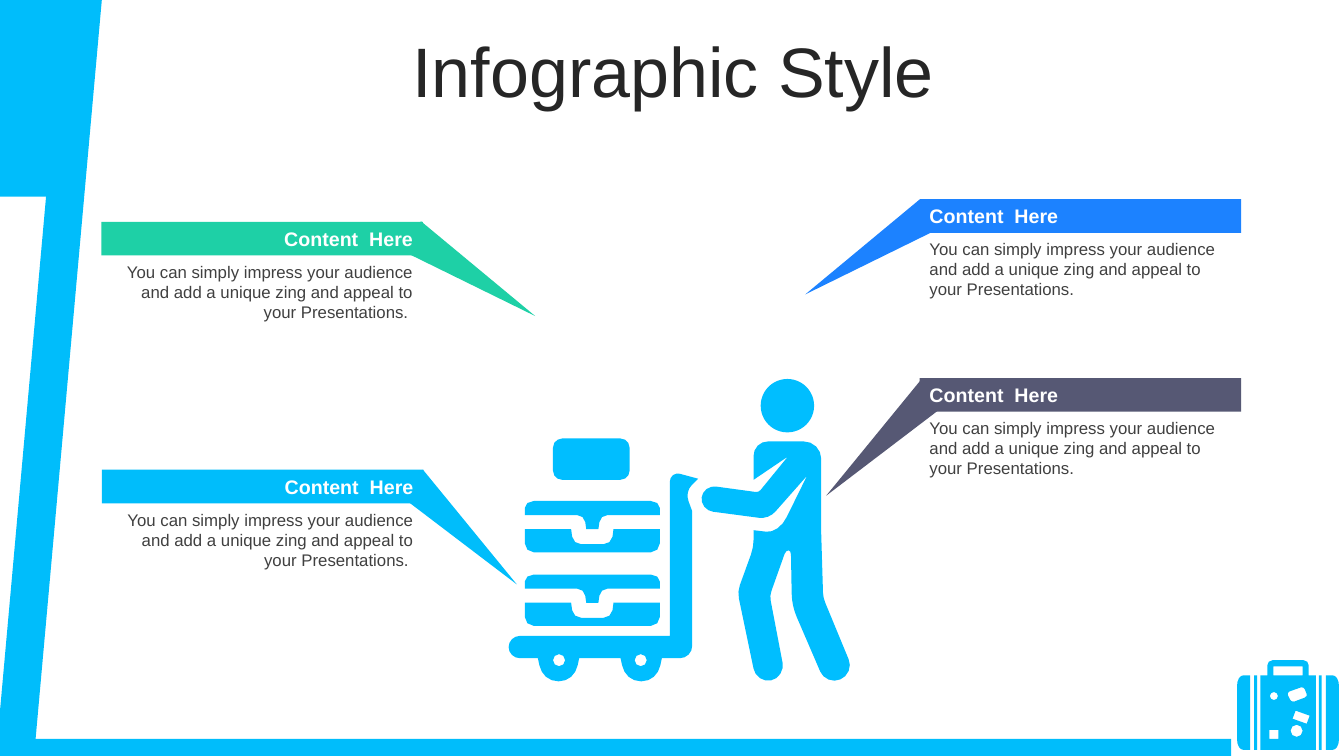
"""Build the Infographic Style slide with a porter and four callouts."""
import math
from dataclasses import dataclass

import pptx
import pptx.dml.color
import pptx.enum.shapes
import pptx.enum.text
import pptx.util

SHAPE = pptx.enum.shapes.MSO_SHAPE
ALIGN = pptx.enum.text.PP_ALIGN
ANCHOR = pptx.enum.text.MSO_ANCHOR
COLS, ROWS = 1333, 750
STEP = pptx.util.Inches(0.01)


@dataclass(frozen=True)
class Theme:
    """Colours, font and type sizes."""
    font: str = "Arial"
    frame: str = "00BDFB"
    figure: str = "00BEFF"
    green: str = "1ED0A6"
    blue: str = "1C82FF"
    slate: str = "565874"
    white: str = "FFFFFF"
    title_ink: str = "262626"
    body_ink: str = "404040"
    title: int = 50
    head: int = 14
    body: int = 12


THEME = Theme()
BODY = ("You can simply impress your audience and add a unique zing "
        "and appeal to your Presentations.")


def grid(*cells):
    """Turn grid cells into slide lengths."""
    return [round(cell * STEP) for cell in cells]


def paint(shape, color):
    """Give a shape a flat fill with no line or shadow."""
    shape.shadow.inherit = False
    shape.fill.solid()
    shape.fill.fore_color.rgb = pptx.dml.color.RGBColor.from_string(color)
    shape.line.fill.background()
    return shape


def block(slide, box, color, kind=SHAPE.RECTANGLE, adjust=None, turn=0):
    """Place a painted preset shape."""
    shape = paint(slide.shapes.add_shape(kind, *grid(*box)), color)
    if adjust is not None:
        shape.adjustments[0] = adjust
    shape.rotation = turn
    return shape


def write(shape, text, size, color, bold=False, align=ALIGN.LEFT,
          anchor=ANCHOR.TOP, spacing=None):
    """Set one formatted paragraph in a shape."""
    frame = shape.text_frame
    frame.word_wrap = True
    frame.vertical_anchor = anchor
    para = frame.paragraphs[0]
    para.alignment = align
    para.line_spacing = spacing
    run = para.add_run()
    run.text = text
    run.font.name = THEME.font
    run.font.size = pptx.util.Pt(size)
    run.font.bold = bold
    run.font.color.rgb = pptx.dml.color.RGBColor.from_string(color)


def soften(corners):
    """Return points that round each corner (x, y, radius) by an arc."""
    points = []
    for i, (x, y, *cut) in enumerate(corners):
        if not cut:
            points.append((x, y))
            continue
        ends = []
        for near in (corners[i - 1], corners[(i + 1) % len(corners)]):
            span = math.dist((x, y), near[:2])
            share = min(cut[0], span / 2) / span
            ends.append((x + (near[0] - x) * share, y + (near[1] - y) * share))
        start, end = ends
        reach = math.dist(start, (x, y)) + math.dist(end, (x, y))
        weight = math.dist(start, end) / reach
        parts = 4 if cut[0] > 9 else 2
        for t in (n / parts for n in range(parts + 1)):
            a, b, c = (1 - t) ** 2, 2 * weight * t * (1 - t), t * t
            points.append(tuple((a * p + b * q + c * r) / (a + b + c)
                                for p, q, r in zip(start, (x, y), end)))
    return points


def ring(x, y, radius):
    """Return the corners of a circle around a centre."""
    return [(x + i * radius, y + j * radius, radius)
            for i, j in ((-1, -1), (1, -1), (1, 1), (-1, 1))]


def outline(slide, box, color, *loops):
    """Draw closed loops as one freeform, from the corner of the box."""
    first, *rest = [[grid(*point) for point in soften(loop)] for loop in loops]
    pen = slide.shapes.build_freeform(*first[0], scale=1.0)
    pen.add_line_segments(first[1:], close=True)
    for loop in rest:
        pen.move_to(*loop[0])
        pen.add_line_segments(loop[1:], close=True)
    return paint(pen.convert_to_shape(*grid(*box[:2])), color)


def border(slide, box):
    """Draw the slanted edge and the base bar."""
    x, y, w, h = box
    block(slide, (x, y + h - 17, w - 112, 17), THEME.frame)
    block(slide, (x, y, 79, 195), THEME.frame)
    block(slide, (x - 4, y, 105, h), THEME.frame, SHAPE.PARALLELOGRAM, 0.64)


def suitcase(slide, box):
    """Draw the suitcase with its straps and stickers."""
    x, y, w, h = box
    outline(slide, box, THEME.frame,
            [(23, 15), (30, 15), (30, 0, 5), (71, 0, 5),
             (71, 15), (78, 15), (78, h), (23, h)],
            [(36, 6), (65, 6), (65, 15), (36, 15)],
            [(49, 32, 3), (66, 26, 3), (70, 36, 3), (54, 42, 3)],
            [(58, 50), (72, 55), (69, 63), (55, 58)],
            [(32, 69), (41, 69), (41, 78), (32, 78)],
            ring(59, 70, 6), ring(36.5, 35.5, 4))
    outline(slide, box, THEME.frame, [(0, 15, 10), (13, 15), (13, h), (0, h, 10)])
    outline(slide, box, THEME.frame,
            [(w - 13, 15), (w, 15, 10), (w, h, 10), (w - 13, h)])
    for strap in (17, w - 20):
        block(slide, (x + strap, y + 15, 3, h - 15), THEME.frame)


def porter(slide, box):
    """Draw the porter pushing a loaded cart."""
    x, y = box[:2]
    outline(slide, box, THEME.figure,
            [(285, 176, 4), (280, 176, 4), (264, 221, 5), (279.5, 302, 15),
             (251, 308, 15), (232, 217, 7), (248, 173, 8), (248, 156),
             (273, 159, 18), (301, 102), (263, 145, 10), (195, 136, 13),
             (198, 111, 13), (253, 118.5, 3), (282, 83), (248, 106),
             (248, 68, 14), (315, 68, 17), (315, 158), (317, 223, 5),
             (348, 298, 15), (320, 310, 15), (286, 231, 12)])
    block(slide, (x + 255, y + 6, 53, 53), THEME.figure, SHAPE.OVAL)
    outline(slide, box, THEME.figure,
            [(5, 261, 11), (165, 261), (165, 97.5, 10), (193, 105),
             (180, 118, 12), (187, 137), (187, 283, 12), (157, 283),
             (154, 297, 8), (144, 306, 8), (129, 306, 8), (119, 297, 8),
             (116, 283), (75, 283), (72, 297, 8), (62, 306, 8),
             (47, 306, 8), (37, 297, 8), (34, 283), (5, 283, 11)],
            ring(55, 285, 6), ring(136, 285, 6))
    block(slide, (x + 49, y + 65, 76, 41), THEME.figure,
          SHAPE.ROUNDED_RECTANGLE, 0.22)
    for top in (127, 200):
        case = (x + 21, y + top)
        outline(slide, case, THEME.figure,
                [(0, 0, 9), (134, 0, 9), (134, 14), (75, 14, 7),
                 (73, 28), (61, 28), (59, 14, 7), (0, 14)])
        outline(slide, case, THEME.figure,
                [(0, 28), (46, 28), (48, 43, 8), (86, 43, 8),
                 (88, 28), (134, 28), (134, 51, 9), (0, 51, 9)])


def callout(slide, box, color, reach, turn, tip, left):
    """Draw a pointer, a heading bar and body text on one side."""
    x, y, w, h = box
    across, down = reach
    center = x + w + across if left else x - across
    block(slide, (center - 17.5, y + down - 73.5, 35, 147), color,
          SHAPE.ISOSCELES_TRIANGLE, tip if left else 1 - tip,
          turn if left else 360 - turn)
    align = ALIGN.RIGHT if left else ALIGN.LEFT
    write(block(slide, (x, y, w, 33.5), color), "Content  Here", THEME.head,
          THEME.white, bold=True, align=align, anchor=ANCHOR.MIDDLE)
    note = slide.shapes.add_textbox(*grid(x, y + 34.5, w, h - 34.5))
    write(note, BODY + " " if left else BODY, THEME.body, THEME.body_ink,
          align=align)


def heading(slide, box):
    """Write the slide title."""
    write(slide.shapes.add_textbox(*grid(*box)), "Infographic Style",
          THEME.title, THEME.title_ink, align=ALIGN.CENTER,
          anchor=ANCHOR.MIDDLE, spacing=0.8)


def main():
    """Build and save the slide."""
    deck = pptx.Presentation()
    deck.slide_width, deck.slide_height = grid(COLS, ROWS)
    slide = deck.slides.add_slide(deck.slide_layouts[6])
    border(slide, (0, 0, COLS, ROWS))
    suitcase(slide, (1227, 655, 101, 89))
    heading(slide, (35, 37, 1266, 79))
    flat, steep = (126.7, 0.22), (139.9, 0.06)
    for x, y, color, reach, slant in (
            (100.5, 220, THEME.green, (46.5, 57.5), flat),
            (101, 466, THEME.frame, (33.5, 67.5), steep),
            (912, 197.5, THEME.blue, (48.5, 58.5), flat),
            (912, 375, THEME.slate, (33.5, 70.5), steep)):
        callout(slide, (x, y, 319, 105), color, reach, *slant, x < COLS / 2)
    porter(slide, (499.5, 370, 350, 310))
    deck.save("out.pptx")


if __name__ == "__main__":
    main()
